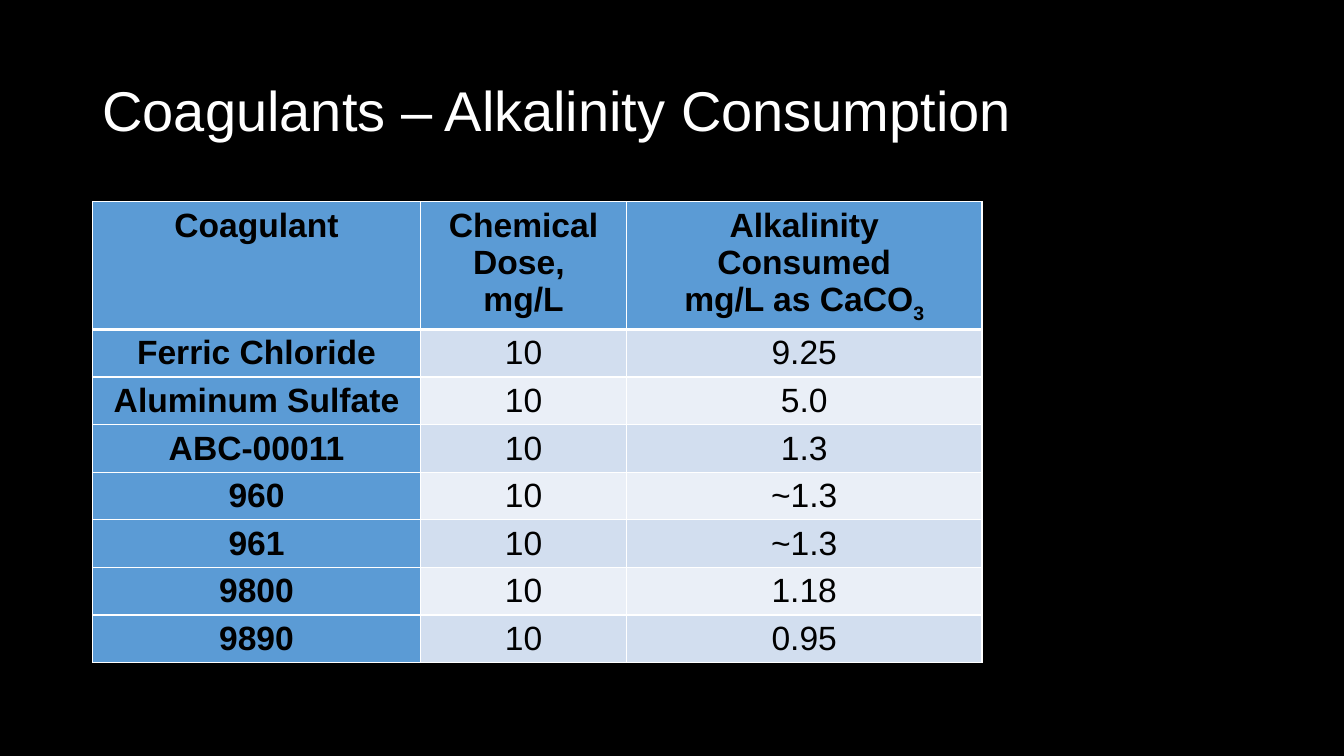
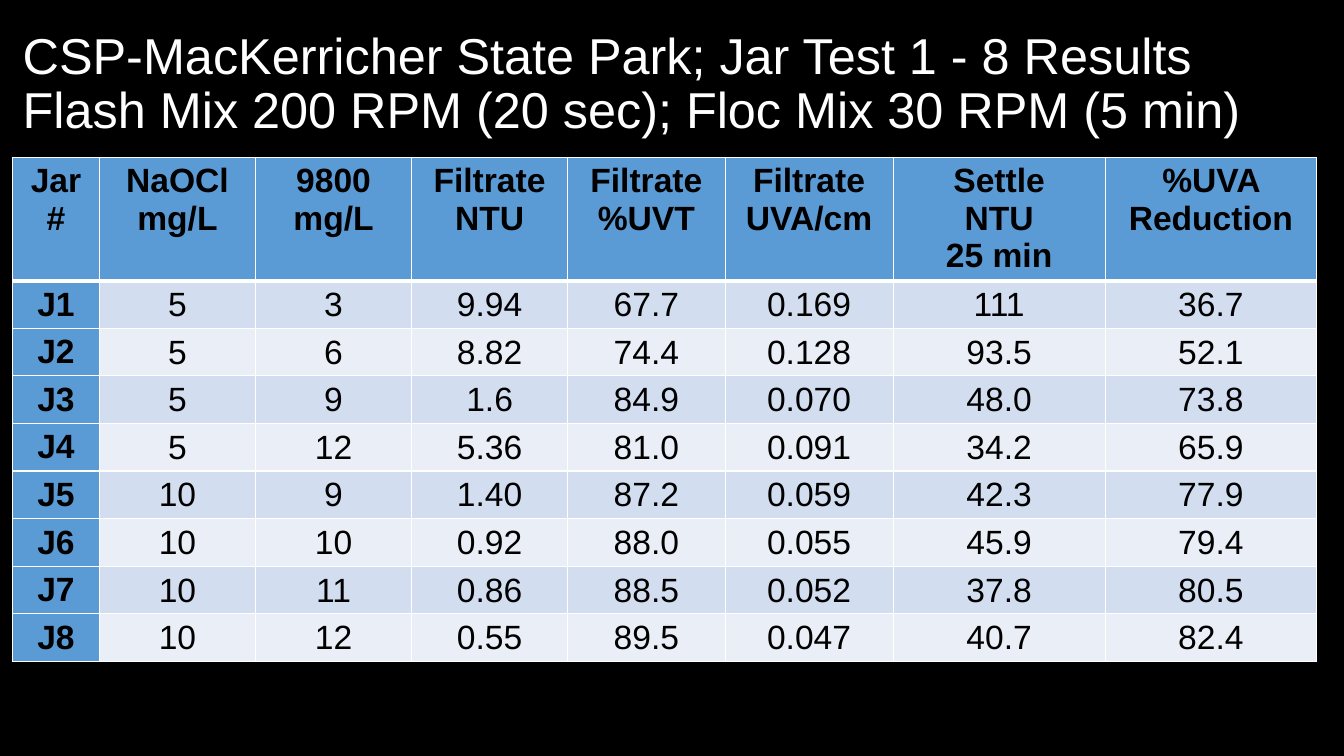
from lxml import etree
from pptx import Presentation
from pptx.dml.color import RGBColor
from pptx.enum.text import MSO_ANCHOR, MSO_AUTO_SIZE, PP_ALIGN
from pptx.oxml.ns import qn
from pptx.util import Pt

# Shared look
FONT = "Arial"
BLACK, WHITE = "000000", "FFFFFF"
HEADING_FILL = "5B9BD5"
BAND_FILLS = ("D2DEEF", "EAEFF7")
TABLE_SIZE = 24
HEADER_HEIGHT, ROW_HEIGHT = 88, 34
THIN, THICK = 1, 3

# Header lines are split by a line break; "_" precedes a subscript.
COAGULANT_ROWS = [
    ("Coagulant", "Chemical\nDose, \nmg/L", "Alkalinity\nConsumed\nmg/L as CaCO_3"),
    ("Ferric Chloride", "10", "9.25"),
    ("Aluminum Sulfate", "10", "5.0"),
    ("ABC-00011", "10", "1.3"),
    ("960", "10", "~1.3"),
    ("961", "10", "~1.3"),
    ("9800", "10", "1.18"),
    ("9890", "10", "0.95"),
]
JAR_ROWS = [
    ("Jar#", "NaOCl\nmg/L", "9800\nmg/L", "Filtrate\nNTU", "Filtrate\n%UVT",
     "Filtrate\nUVA/cm", "Settle\nNTU\n25 min", "%UVA Reduction"),
    ("J1", "5", "3", "9.94", "67.7", "0.169", "111", "36.7"),
    ("J2", "5", "6", "8.82", "74.4", "0.128", "93.5", "52.1"),
    ("J3", "5", "9", "1.6", "84.9", "0.070", "48.0", "73.8"),
    ("J4", "5", "12", "5.36", "81.0", "0.091", "34.2", "65.9"),
    ("J5", "10", "9", "1.40", "87.2", "0.059", "42.3", "77.9"),
    ("J6", "10", "10", "0.92", "88.0", "0.055", "45.9", "79.4"),
    ("J7", "10", "11", "0.86", "88.5", "0.052", "37.8", "80.5"),
    ("J8", "10", "12", "0.55", "89.5", "0.047", "40.7", "82.4"),
]


def set_fill(fill, color):
    fill.solid()
    fill.fore_color.rgb = RGBColor.from_string(color)


def style_paragraph(paragraph, size, color, bold, alignment):
    paragraph.alignment = alignment
    font = paragraph.font
    font.name, font.size, font.bold = FONT, Pt(size), bold
    font.color.rgb = RGBColor.from_string(color)


def place_title(slide, text, box, size):
    title = slide.shapes.title
    title.left, title.top, title.width, title.height = map(Pt, box)
    frame = title.text_frame
    frame.word_wrap = True
    frame.auto_size = MSO_AUTO_SIZE.NONE
    frame.vertical_anchor = MSO_ANCHOR.MIDDLE
    paragraph = frame.paragraphs[0]
    paragraph.text = text
    paragraph.line_spacing = 0.9
    style_paragraph(paragraph, size, WHITE, False, PP_ALIGN.LEFT)


def write_cell(cell, text, bold):
    frame = cell.text_frame
    for index, line in enumerate(text.split("\n")):
        paragraph = frame.add_paragraph() if index else frame.paragraphs[0]
        style_paragraph(paragraph, TABLE_SIZE, BLACK, bold, PP_ALIGN.CENTER)
        for part_index, part in enumerate(line.split("_")):
            run = paragraph.add_run()
            run.text = part
            if part_index:
                run.font._element.set("baseline", "-25000")


def set_borders(cell, top, bottom):
    # Border lines come before the fill in the cell properties
    properties = cell._tc.get_or_add_tcPr()
    sides = {"lnL": THIN, "lnR": THIN, "lnT": top, "lnB": bottom}
    for index, (side, width) in enumerate(sides.items()):
        line = etree.Element(qn(f"a:{side}"), w=str(Pt(width)))
        solid = etree.SubElement(line, qn("a:solidFill"))
        etree.SubElement(solid, qn("a:srgbClr"), val=WHITE)
        properties.insert(index, line)


def place_table(slide, rows, left, top, widths, tight_values=False):
    height = HEADER_HEIGHT + ROW_HEIGHT * (len(rows) - 1)
    table = slide.shapes.add_table(
        len(rows), len(widths), Pt(left), Pt(top), Pt(sum(widths)), Pt(height)).table
    table.first_row = table.horz_banding = False
    for column, width in zip(table.columns, widths):
        column.width = Pt(width)

    for row_index, values in enumerate(rows):
        table.rows[row_index].height = Pt(ROW_HEIGHT if row_index else HEADER_HEIGHT)
        for column_index, value in enumerate(values):
            cell = table.cell(row_index, column_index)
            heading = row_index == 0 or column_index == 0
            band = BAND_FILLS[(row_index - 1) % 2]
            set_fill(cell.fill, HEADING_FILL if heading else band)
            set_borders(cell, THICK if row_index == 1 else THIN,
                        THICK if row_index == 0 else THIN)
            write_cell(cell, value, heading)
            if tight_values and not heading:
                cell.vertical_anchor = MSO_ANCHOR.MIDDLE
                cell.margin_left = cell.margin_right = cell.margin_top = Pt(0.7)
                cell.margin_bottom = Pt(0)


def add_coagulant_slide(presentation, layout):
    slide = presentation.slides.add_slide(layout)
    place_title(slide, "Coagulants – Alkalinity Consumption", (66, 29, 828, 104), 40)
    place_table(slide, COAGULANT_ROWS, 66, 144, (234.5, 147, 254))


def add_jar_test_slide(presentation, layout):
    slide = presentation.slides.add_slide(layout)
    place_title(slide,
                "CSP-MacKerricher State Park; Jar Test 1 - 8 Results\n"
                "Flash Mix 200 RPM (20 sec); Floc Mix 30 RPM (5 min)",
                (9, 9, 938, 104), 36)
    widths = (62, 111.5, 111.5, 111.5, 112.5, 120, 151.5, 151)
    place_table(slide, JAR_ROWS, 9, 112.5, widths, tight_values=True)


def main():
    presentation = Presentation()
    presentation.slide_width, presentation.slide_height = Pt(960), Pt(540)
    set_fill(presentation.slide_master.background.fill, BLACK)
    title_only = presentation.slide_layouts.get_by_name("Title Only")
    add_coagulant_slide(presentation, title_only)
    add_jar_test_slide(presentation, title_only)
    presentation.save("out.pptx")


if __name__ == "__main__":
    main()
